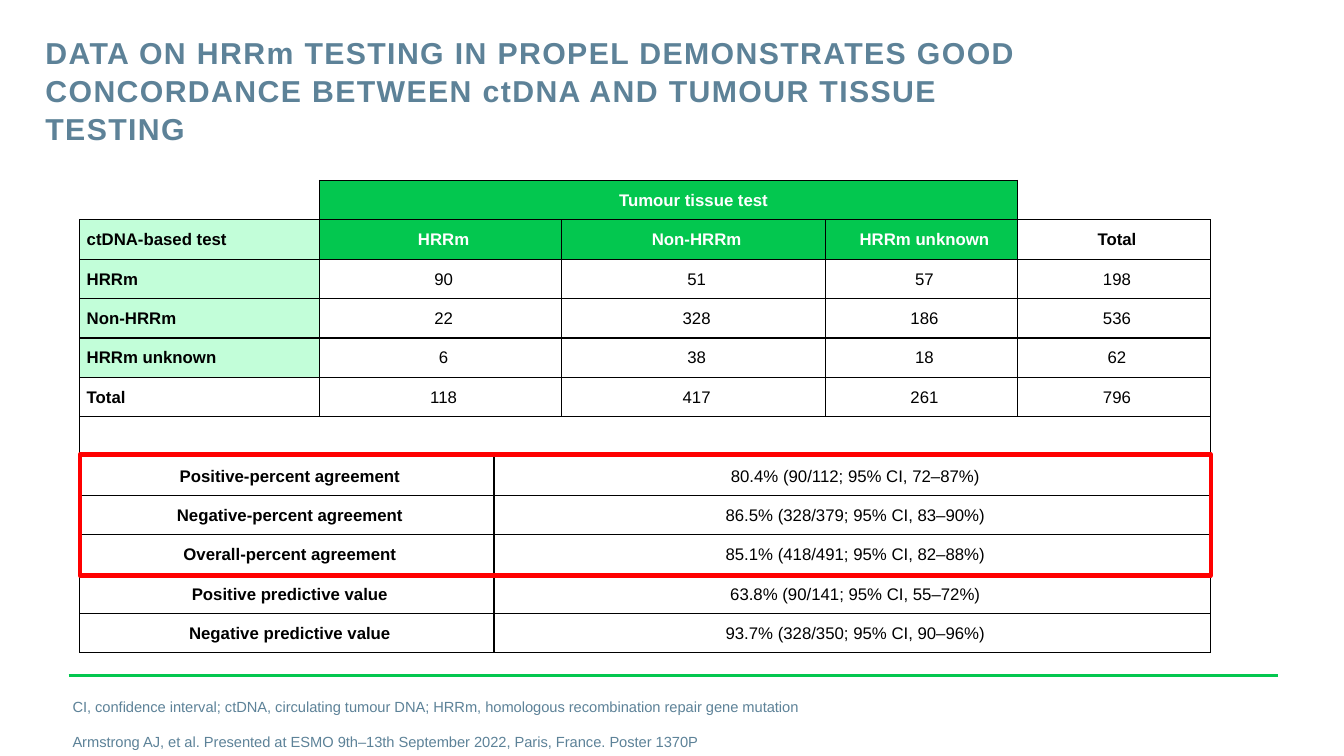
from lxml import etree
from pptx import Presentation
from pptx import util as u
from pptx.dml.color import RGBColor
from pptx.enum import shapes, text
from pptx.oxml import parse_xml
from pptx.oxml.ns import nsdecls, qn

THEME = {
    "font": "Arial", "title": 21.6, "cell": 12, "note": 10.5,
    "slate": "5D8298", "green": "03C74F", "mint": "C2FED9",
    "white": "FFFFFF", "black": "000000", "red": "FF0000",
}

prs = Presentation()
prs.slide_width, prs.slide_height = u.Inches(13.33), u.Inches(7.5)
s = prs.slides.add_slide(prs.slide_layouts[6])


def area(*percents):
    """Turn percentages of the slide (x, y, x, y) into lengths."""
    sides = (prs.slide_width, prs.slide_height) * 2
    return [round(side * pct / 100) for side, pct in zip(sides, percents)]


def write(p, words, size, color, bold=False, align=None, left=0, first=0, before=0):
    pPr = p._p.get_or_add_pPr()
    pPr.set("marL", str(u.Inches(left)))
    pPr.set("indent", str(u.Inches(first)))
    p.alignment = align
    p.space_before = u.Pt(before)
    r = p.add_run()
    r.text = words
    r.font.name = THEME["font"]
    r.font.size = u.Pt(THEME[size])
    r.font.bold = bold
    r.font.color.rgb = RGBColor.from_string(THEME[color])
    return r


# Title and footnotes
frames = []
for place, anchor in (((3.38, 4.27, 76.67, 14), text.MSO_ANCHOR.TOP),
                      ((5.4, 89.6, 79.82, 9.6), text.MSO_ANCHOR.BOTTOM)):
    tf = s.shapes.add_textbox(*area(*place)).text_frame
    tf.word_wrap = True
    tf.vertical_anchor = anchor
    tf.margin_left = tf.margin_right = tf.margin_top = tf.margin_bottom = 0
    frames.append(tf)
title, notes = frames

p = title.paragraphs[0]
p.line_spacing = 1.05
r = write(p, "DATA ON HRRm TESTING IN PROPEL DEMONSTRATES GOOD CONCORDANCE "
          "BETWEEN ctDNA AND TUMOUR TISSUE TESTING", "title", "slate", bold=True)
r.font._element.set("spc", "100")

write(notes.paragraphs[0], "CI, confidence interval; ctDNA, circulating tumour DNA; "
      "HRRm, homologous recombination repair gene mutation",
      "note", "slate", left=0.31, first=-0.31)
write(notes.add_paragraph(), "Armstrong AJ, et al. Presented at ESMO 9th–13th September 2022, "
      "Paris, France. Poster 1370P", "note", "slate", left=0.31, first=-0.31, before=12)

# Footer rule
x1, y1, x2, y2 = area(5.1, 89.33, 95.12, 89.33)
rule = s.shapes.add_connector(shapes.MSO_CONNECTOR.STRAIGHT, x1, y1, x2, y2)
rule.line.color.rgb = RGBColor.from_string(THEME["green"])
rule.line.width = u.Pt(2)
etree.SubElement(rule._element.spPr, qn("a:effectLst"))

# Table content: column -> words, by row
counts = [
    ("ctDNA-based test", "HRRm", "Non-HRRm", "HRRm unknown", "Total"),
    ("HRRm", "90", "51", "57", "198"),
    ("Non-HRRm", "22", "328", "186", "536"),
    ("HRRm unknown", "6", "38", "18", "62"),
    ("Total", "118", "417", "261", "796"),
]
agreement = [
    ("Positive-percent agreement", "80.4% (90/112; 95% CI, 72–87%)"),
    ("Negative-percent agreement", "86.5% (328/379; 95% CI, 83–90%)"),
    ("Overall-percent agreement", "85.1% (418/491; 95% CI, 82–88%)"),
    ("Positive predictive value", "63.8% (90/141; 95% CI, 55–72%)"),
    ("Negative predictive value", "93.7% (328/350; 95% CI, 90–96%)"),
]
rows = [{1: "Tumour tissue test"}]
rows += [dict(zip((0, 1, 3, 4, 5), line)) for line in counts]
rows += [{}]
rows += [dict(zip((0, 2), line)) for line in agreement]
gap = len(counts) + 1

# Table grid
widths = (17.85, 12.98, 5.03, 19.65, 14.25, 14.4)
left, top, row_h = 5.93, 23.87, 5.21
tbl = s.shapes.add_table(len(rows), len(widths),
                         *area(left, top, sum(widths), row_h * len(rows))).table
tbl.first_row = tbl.horz_banding = False
for col, pct in zip(tbl.columns, widths):
    col.width = area(pct)[0]
for row in tbl.rows:
    row.height = area(0, row_h)[1]

# Cell text, fills and borders
for i, words in enumerate(rows):
    for j in range(len(widths)):
        cell = tbl.cell(i, j)
        cell.vertical_anchor = text.MSO_ANCHOR.MIDDLE
        cell.margin_left = u.Inches(0.01 if i == 0 else 0.07)
        cell.margin_right = cell.margin_top = u.Inches(0.01)
        cell.margin_bottom = 0

        edges = {(0, 0): "RB", (0, 5): "LB"}.get((i, j), "LRTB")
        for side in "LRTB":
            paint = ('<a:solidFill><a:srgbClr val="%s"/></a:solidFill>' % THEME["black"]
                     if side in edges else "<a:noFill/>")
            cell._tc.get_or_add_tcPr().append(parse_xml(
                f'<a:ln{side} {nsdecls("a")} w="{u.Pt(1)}">{paint}</a:ln{side}>'))

        header = i < 2 and 1 <= j <= 4
        stub = 1 <= i < gap - 1 and j == 0
        if header or stub:
            cell.fill.solid()
            cell.fill.fore_color.rgb = RGBColor.from_string(
                THEME["green" if header else "mint"])
        else:
            cell.fill.background()

        if j in words:
            write(cell.text_frame.paragraphs[0], words[j], "cell",
                  "white" if header else "black", bold=i < 2 or j == 0,
                  align=text.PP_ALIGN.LEFT if j == 0 and i < gap else text.PP_ALIGN.CENTER,
                  left=0.5 if i == 0 else 0)

# Merged cells
spans = [(0, 1, 4), (gap, 0, 5)]
spans += [(i, 1, 2) for i in range(1, gap)]
spans += [(i, *cols) for i in range(gap + 1, len(rows)) for cols in ((0, 1), (2, 5))]
for i, start, end in spans:
    tbl.cell(i, start).merge(tbl.cell(i, end))

# Highlight around the three agreement rows
sp = s.shapes.add_shape(shapes.MSO_SHAPE.RECTANGLE, *area(left, 60.13, sum(widths), 16))
sp.shadow.inherit = False
sp.fill.background()
sp.line.color.rgb = RGBColor.from_string(THEME["red"])
sp.line.width = u.Pt(3)

prs.save("out.pptx")
